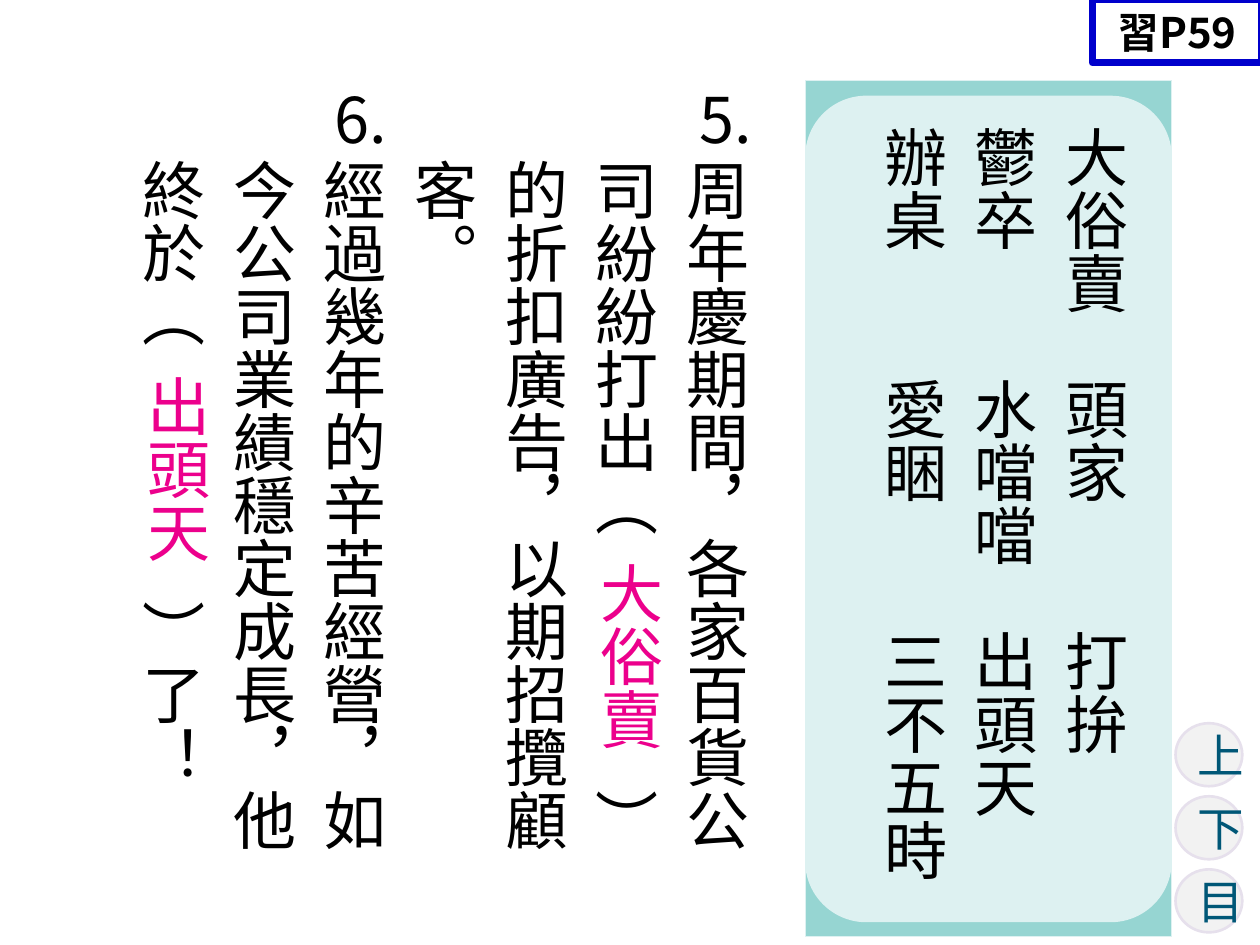
from dataclasses import dataclass
from typing import Optional

from lxml.etree import SubElement
from pptx import Presentation
from pptx.dml.color import RGBColor
from pptx.enum.shapes import MSO_SHAPE
from pptx.enum.text import MSO_ANCHOR, MSO_AUTO_SIZE, PP_ALIGN
from pptx.oxml.ns import qn
from pptx.util import Inches, Pt

COLORS = {
    "ink": "000000", "answer": "EC008C", "badge": "0000CC",
    "frame": "96D5D2", "panel": "DDF1F1",
    "button": "F2F2F2", "ring": "E6E0EC", "button_text": "005777",
}
SANS, ARIAL, TIMES = "Noto Sans CJK SC", "Arial", "Times New Roman"
CELL = 0.1  # the slide is a grid of 100 columns by 75 rows


@dataclass
class Area:
    column: float
    row: float
    columns: float
    rows: float

    def lengths(self) -> list:
        cells = (self.column, self.row, self.columns, self.rows)
        return [Inches(cell * CELL) for cell in cells]


@dataclass
class Style:
    size: float = 36
    font: str = SANS
    color: str = "ink"
    bold: bool = False
    align: Optional[PP_ALIGN] = None
    spacing: Optional[float] = None
    indent: float = 0
    vertical: bool = False
    wrap: bool = True
    grow: bool = True
    anchor: MSO_ANCHOR = MSO_ANCHOR.TOP
    insets: tuple = (0.1, 0.05, 0.1, 0.05)


def rgb(name: str) -> RGBColor:
    return RGBColor.from_string(COLORS[name])


def write(box, lines: list[str], style: Style) -> None:
    frame = box.text_frame
    frame.word_wrap = style.wrap
    frame.vertical_anchor = style.anchor
    if style.grow:
        frame.auto_size = MSO_AUTO_SIZE.SHAPE_TO_FIT_TEXT
    (frame.margin_left, frame.margin_top, frame.margin_right,
     frame.margin_bottom) = map(Inches, style.insets)
    if style.vertical:
        frame._txBody.bodyPr.set("vert", "eaVert")
    for number, line in enumerate(lines):
        para = frame.add_paragraph() if number else frame.paragraphs[0]
        para.alignment = style.align or PP_ALIGN.LEFT
        if style.spacing:
            para.line_spacing = style.spacing
        if style.indent:
            properties = para._p.get_or_add_pPr()
            properties.set("marL", str(Inches(style.indent)))
            properties.set("indent", "0")
        span = para.add_run()
        span.text = line
        span.font.size = Pt(style.size)
        span.font.name = style.font
        span.font.bold = style.bold
        span.font.color.rgb = rgb(style.color)
        SubElement(span._r.rPr, qn("a:ea")).set("typeface", SANS)


def add_panel(page, kind: MSO_SHAPE, area: Area, fill: Optional[str] = None,
              line: Optional[str] = None, width: float = 0.75):
    box = page.shapes.add_shape(kind, *area.lengths())
    box.shadow.inherit = False
    if fill:
        box.fill.solid()
        box.fill.fore_color.rgb = rgb(fill)
    else:
        box.fill.background()
    if line:
        box.line.color.rgb = rgb(line)
        box.line.width = Pt(width)
    else:
        box.line.fill.background()
    return box


def add_text(page, area: Area, lines: list[str], style: Style) -> None:
    write(page.shapes.add_textbox(*area.lengths()), lines, style)


def main() -> None:
    deck = Presentation()
    deck.slide_width, deck.slide_height = Inches(100 * CELL), Inches(75 * CELL)
    page = deck.slides.add_slide(deck.slide_layouts[6])

    # Navigation buttons
    button_style = Style(26.6, color="button_text", align=PP_ALIGN.CENTER,
                         grow=False, anchor=MSO_ANCHOR.MIDDLE)
    for number, label in enumerate("上下目"):
        area = Area(93.3, 57.4 + 5.8 * number, 5.3, 5)
        button = add_panel(page, MSO_SHAPE.OVAL, area, "button", "ring", 1.5)
        write(button, [label], button_style)

    # Page badge
    badge = add_panel(page, MSO_SHAPE.RECTANGLE, Area(86.7, 0, 13.4, 5),
                      line="badge", width=4)
    write(badge, ["習P59"], Style(24, bold=True, align=PP_ALIGN.CENTER))

    # Word bank
    add_panel(page, MSO_SHAPE.RECTANGLE, Area(63.9, 6.4, 29.1, 67.9),
              "frame", "panel")
    bank = add_panel(page, MSO_SHAPE.ROUNDED_RECTANGLE,
                     Area(63.9, 7.6, 29.1, 65.6), "panel")
    write(bank, ["大俗賣　頭家　　打拚", "鬱卒　　水噹噹　出頭天",
                 "辦桌　　愛睏　　三不五時"],
          Style(font=ARIAL, spacing=1.2, vertical=True, grow=False,
                insets=(0, 0.05, 0.1, 0)))

    # Sentences with blanks
    add_text(page, Area(8.6, 6.7, 52.9, 65.5),
             ["周年慶期間，各家百貨公司紛紛打出（　　　　）的折扣廣告，以期招攬顧客。",
              "經過幾年的辛苦經營，如今公司業績穩定成長，他終於（　　　　）了！"],
             Style(spacing=1.2, indent=0.49, vertical=True))

    # Question numbers and answers
    number_style = Style(wrap=False)
    answer_style = Style(font=TIMES, color="answer", vertical=True, wrap=False)
    for number, number_column, answer, column, row in (
            ("5.", 54.5, "大俗賣", 45.4, 43.6),
            ("6.", 25.6, "出頭天", 9.4, 28.8)):
        add_text(page, Area(number_column, 5.9, 7.1, 7.1), [number], number_style)
        add_text(page, Area(column, row, 8.1, 16.2), [answer], answer_style)

    deck.save("out.pptx")


if __name__ == "__main__":
    main()
